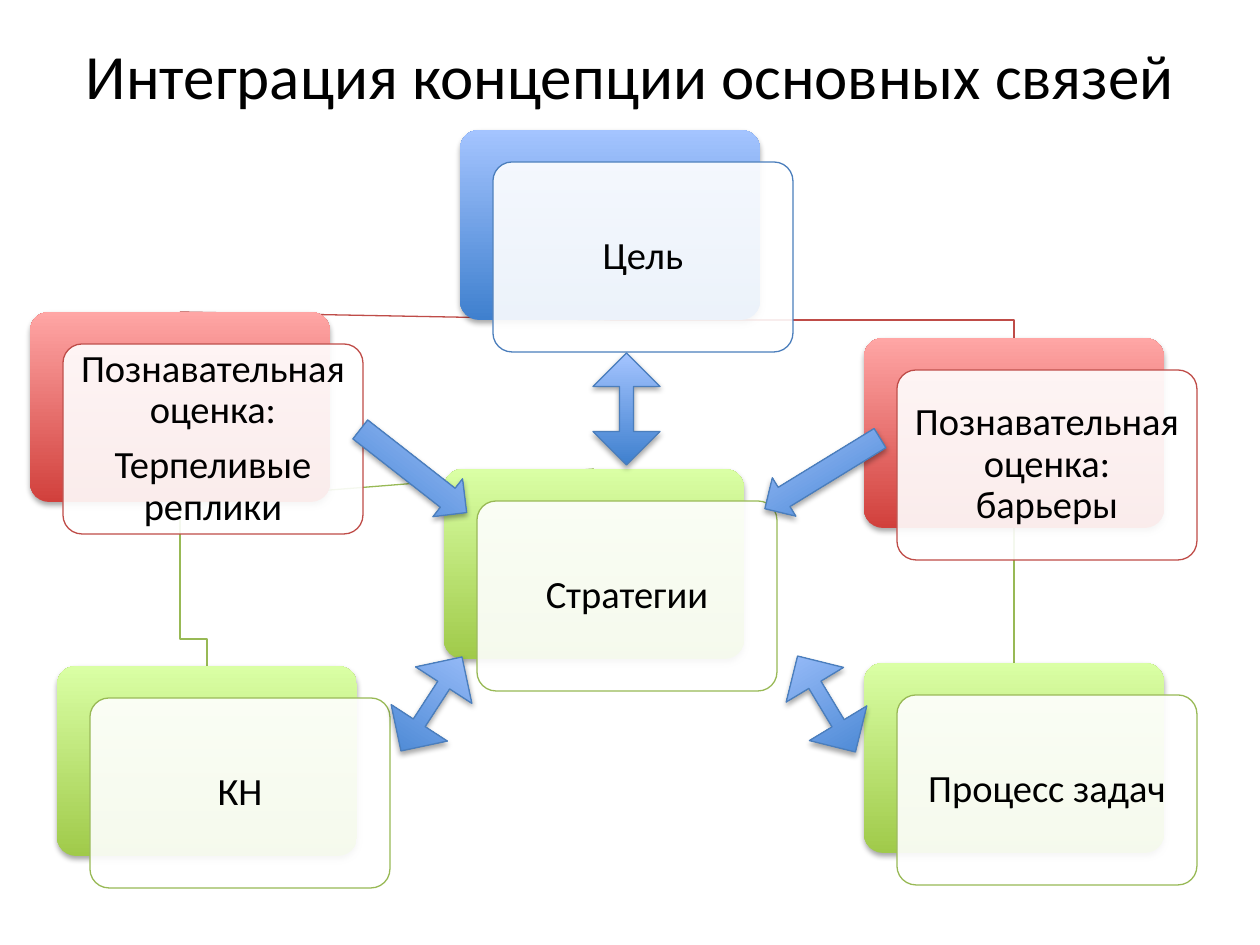
import pptx
import pptx.util
from lxml import etree
from pptx.dml.color import RGBColor
from pptx.enum.dml import MSO_LINE
from pptx.enum.shapes import MSO_CONNECTOR, MSO_SHAPE
from pptx.enum.text import MSO_ANCHOR, PP_ALIGN
from pptx.oxml.ns import qn

EMU_PER_PX = 914400 / 126
CARD_WIDTH, CARD_HEIGHT = 300, 190
FRONT_DX, FRONT_DY = 33, 32

WHITE = RGBColor(0xFF, 0xFF, 0xFF)
BLACK = RGBColor(0x00, 0x00, 0x00)
BLUE_LINE = RGBColor(0x4B, 0x7E, 0xBC)
RED_LINE = RGBColor(0xBF, 0x4C, 0x48)
GREEN_LINE = RGBColor(0x98, 0xB9, 0x55)
# Each palette: gradient bottom, gradient top, outline
BLUE = (RGBColor(0x3F, 0x80, 0xCE), RGBColor(0xA4, 0xC4, 0xFF), BLUE_LINE)
RED = (RGBColor(0xD1, 0x40, 0x3C), RGBColor(0xFF, 0xA6, 0xA5), RED_LINE)
GREEN = (RGBColor(0xA0, 0xCA, 0x4A), RGBColor(0xDA, 0xFF, 0xA5), GREEN_LINE)

CARDS = {
    "goal": (460, 130, BLUE, ["Цель"]),
    "cues": (30, 312, RED, ["Познавательная оценка:", "Терпеливые реплики"]),
    "kn": (57, 666, GREEN, ["КН"]),
    "strategies": (444, 469, GREEN, ["Стратегии"]),
    "barriers": (864, 338, RED, ["Познавательная оценка: барьеры"]),
    "process": (864, 663, GREEN, ["Процесс задач"]),
}
# Start card, end card, side of the end card (0 top), colour
STRAIGHT_LINKS = [
    ("barriers", "process", GREEN_LINE),
    ("cues", "strategies", GREEN_LINE),
    ("goal", "cues", RED_LINE),
]
# Start card, end card, height of the bend above the end card, colour
BENT_LINKS = [("goal", "barriers", 18, RED_LINE), ("cues", "kn", 27, GREEN_LINE)]

ARROWS = [
    (MSO_SHAPE.UP_DOWN_ARROW, (398, 648, 67, 112), 33),
    (MSO_SHAPE.UP_DOWN_ARROW, (593, 353, 67, 112), 0),
    (MSO_SHAPE.UP_DOWN_ARROW, (793, 648, 67, 112), 328.9),
    (MSO_SHAPE.RIGHT_ARROW, (346, 447, 135, 48), 38),
    (MSO_SHAPE.LEFT_ARROW, (755, 451, 135, 45), 328.5),
]


def px(length):
    return pptx.util.Emu(round(length * EMU_PER_PX))


def write_text(shape, lines, size, line_spacing=1.0, space_after=0, margin=None):
    frame = shape.text_frame
    frame.word_wrap = True
    frame.vertical_anchor = MSO_ANCHOR.MIDDLE
    if margin is not None:
        frame.margin_left = frame.margin_right = px(margin)
        frame.margin_top = frame.margin_bottom = px(margin)
    for index, line in enumerate(lines):
        paragraph = frame.add_paragraph() if index else frame.paragraphs[0]
        paragraph.alignment = PP_ALIGN.CENTER
        paragraph.line_spacing = line_spacing
        paragraph.space_after = pptx.util.Pt(space_after)
        run = paragraph.add_run()
        run.text = line
        run.font.name = "Calibri"
        run.font.size = pptx.util.Pt(size)
        run.font.color.rgb = BLACK


def set_line(shape, color):
    shape.line.color.rgb = color
    shape.line.width = pptx.util.Pt(0.75)


def add_preset(slide, preset, box):
    shape = slide.shapes.add_shape(preset, *map(px, box))
    shape.shadow.inherit = False
    return shape


def add_raised(slide, preset, box, palette):
    """Add a shape with a vertical gradient and a soft shadow below it."""
    shape = add_preset(slide, preset, box)
    shape.fill.gradient()
    shape.fill.gradient_angle = 90
    for stop, color in zip(shape.fill.gradient_stops, palette):
        stop.color.rgb = color
    for stop, position in zip(shape.fill.gradient_stops, (0, 1)):
        stop.position = position
    effects = shape.element.spPr.find(qn("a:effectLst"))
    shadow = etree.SubElement(effects, qn("a:outerShdw"), blurRad="40000",
                              dist="23000", dir="5400000", rotWithShape="0")
    color = etree.SubElement(shadow, qn("a:srgbClr"), val=str(BLACK))
    etree.SubElement(color, qn("a:alpha"), val="35000")
    return shape


def add_card(slide, left, top, palette, lines):
    """Add a coloured back with a white text card over it; return the back."""
    back = add_raised(slide, MSO_SHAPE.ROUNDED_RECTANGLE,
                      (left, top, CARD_WIDTH, CARD_HEIGHT), palette)
    back.line.fill.background()
    front = add_preset(slide, MSO_SHAPE.ROUNDED_RECTANGLE,
                       (left + FRONT_DX, top + FRONT_DY, CARD_WIDTH, CARD_HEIGHT))
    for shape in (back, front):
        shape.adjustments[0] = 0.1
    front.fill.solid()
    front.fill.fore_color.rgb = WHITE
    color = front.element.spPr.find(qn("a:solidFill")).find(qn("a:srgbClr"))
    etree.SubElement(color, qn("a:alpha"), val="90000")
    set_line(front, palette[2])
    write_text(front, lines, size=22, line_spacing=0.9, space_after=7.7, margin=11)
    return back


def send_to_back(slide, shape):
    slide.shapes.element.insert(2, shape.element)


def add_straight_link(slide, start, end, color):
    connector = slide.shapes.add_connector(MSO_CONNECTOR.STRAIGHT, 0, 0, 0, 0)
    connector.begin_connect(start, 2)
    connector.end_connect(end, 0)
    set_line(connector, color)
    etree.SubElement(connector.element.spPr, qn("a:effectLst"))
    send_to_back(slide, connector)


def add_bent_link(slide, start, end, rise, color):
    start_x, start_y = start.left + start.width // 2, start.top + start.height
    end_x, end_y = end.left + end.width // 2, end.top
    bend_y = end_y - px(rise)
    builder = slide.shapes.build_freeform(start_x, start_y)
    builder.add_line_segments(
        [(start_x, bend_y), (end_x, bend_y), (end_x, end_y)], close=False)
    link = builder.convert_to_shape()
    link.shadow.inherit = False
    link.fill.background()
    set_line(link, color)
    send_to_back(slide, link)


def add_arrow(slide, preset, box, rotation):
    arrow = add_raised(slide, preset, box, BLUE)
    arrow.rotation = rotation
    set_line(arrow, BLUE_LINE)
    if preset == MSO_SHAPE.UP_DOWN_ARROW:
        arrow.adjustments[0] = 0.07
        arrow.adjustments[1] = 0.21


def main():
    presentation = pptx.Presentation()
    presentation.slide_width = pptx.util.Inches(10)
    presentation.slide_height = pptx.util.Inches(7.5)
    slide = presentation.slides.add_slide(presentation.slide_layouts[5])

    title = slide.shapes.title
    title.left, title.top, title.width, title.height = map(px, (63, 19, 1134, 111))
    write_text(title, ["Интеграция концепции основных связей"], size=36)

    backs = {name: add_card(slide, *card) for name, card in CARDS.items()}
    for start, end, color in STRAIGHT_LINKS:
        add_straight_link(slide, backs[start], backs[end], color)
    for start, end, rise, color in BENT_LINKS:
        add_bent_link(slide, backs[start], backs[end], rise, color)
    for arrow in ARROWS:
        add_arrow(slide, *arrow)

    presentation.save("out.pptx")


if __name__ == "__main__":
    main()
